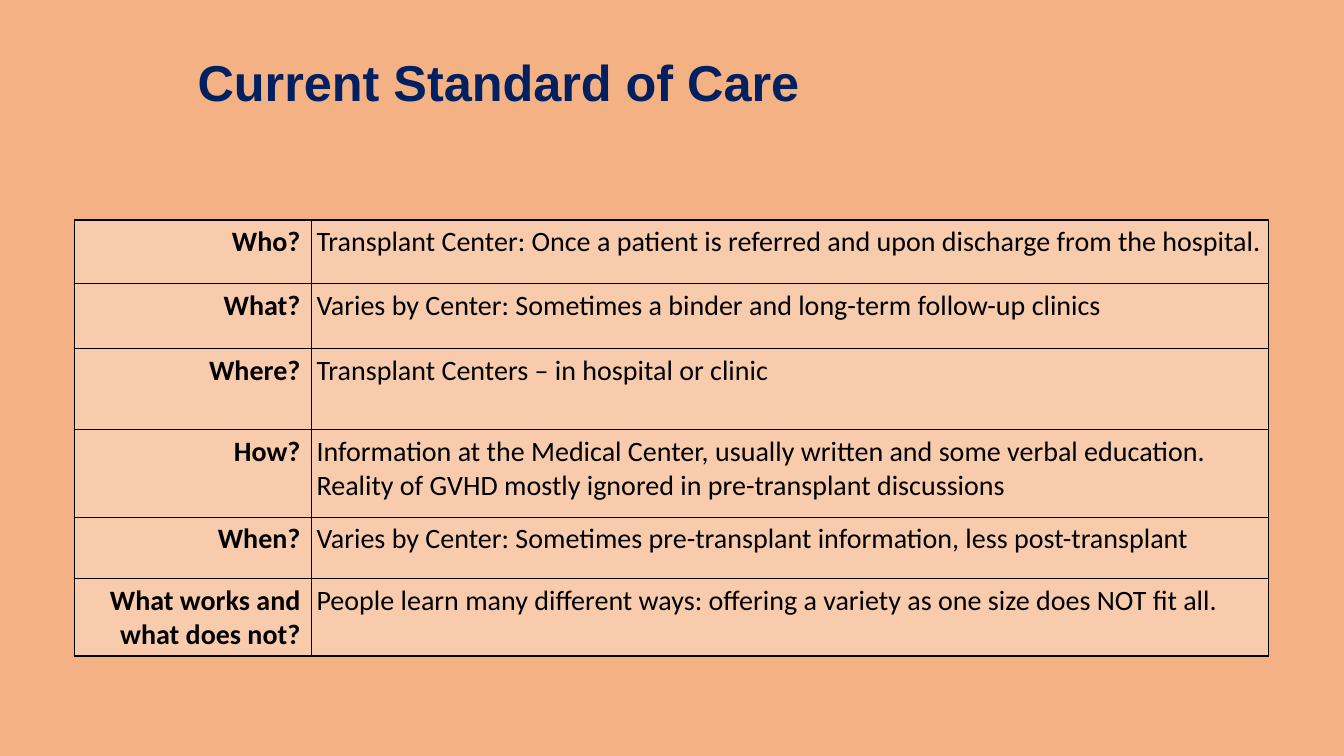
from lxml.etree import SubElement
from pptx import Presentation
from pptx.dml.color import RGBColor
from pptx.enum.text import MSO_ANCHOR, PP_ALIGN
from pptx.oxml.ns import qn
from pptx.util import Inches, Pt

COLORS = {
    "background": "F4B183",
    "cell": "F8CBAD",
    "title": "002060",
    "text": "000000",
    "border": "000000",
}

QUESTIONS = [
    ("Who?", "Transplant Center: Once a patient is referred and upon discharge from the hospital."),
    ("What?", "Varies by Center: Sometimes a binder and long-term follow-up clinics"),
    ("Where?", "Transplant Centers – in hospital or clinic"),
    ("How?", "Information at the Medical Center, usually written and some verbal education. "
             "Reality of GVHD mostly ignored in pre-transplant discussions"),
    ("When?", "Varies by Center: Sometimes pre-transplant information, less post-transplant"),
    ("What works and what does not?",
     "People learn many different ways: offering a variety as one size does NOT fit all."),
]


class SlideBuilder:
    """Holds the style and the current slide; lengths are percent of the slide."""

    title_font, body_font = "Arial", "Calibri"
    title_size, body_size = 36, 20
    cell_margin, label_margin = Inches(0.05), Inches(0.11)

    def __init__(self, presentation):
        self.width = presentation.slide_width
        self.height = presentation.slide_height
        self.slide = presentation.slides.add_slide(presentation.slide_layouts[6])

    def across(self, share):
        return round(self.width * share / 100)

    def down(self, share):
        return round(self.height * share / 100)

    def paint(self, fill, color):
        fill.solid()
        fill.fore_color.rgb = RGBColor.from_string(COLORS[color])

    def background(self):
        self.paint(self.slide.background.fill, "background")

    def add_text(self, paragraph, text, font, size, color, bold):
        run = paragraph.add_run()
        run.text = text
        run.font.name = font
        run.font.size = Pt(size)
        run.font.bold = bold
        run.font.color.rgb = RGBColor.from_string(COLORS[color])

    def title(self, text, left, top, width, height):
        shape = self.slide.shapes.add_textbox(
            self.across(left), self.down(top), self.across(width), self.down(height))
        frame = shape.text_frame
        frame.word_wrap = True
        frame.vertical_anchor = MSO_ANCHOR.MIDDLE
        frame.margin_left = frame.margin_right = 0
        frame.margin_top = frame.margin_bottom = 0
        paragraph = frame.paragraphs[0]
        paragraph.line_spacing = 0.9
        self.add_text(paragraph, text, self.title_font, self.title_size, "title", True)

    def borders(self, cell):
        properties = cell._tc.get_or_add_tcPr()
        for side in ("a:lnL", "a:lnR", "a:lnT", "a:lnB"):
            line = SubElement(properties, qn(side), w=str(Pt(1)))
            fill = SubElement(line, qn("a:solidFill"))
            SubElement(fill, qn("a:srgbClr"), val=COLORS["border"])

    def cell(self, cell, text, is_label):
        cell.margin_left = cell.margin_top = cell.margin_bottom = self.cell_margin
        cell.margin_right = self.label_margin if is_label else self.cell_margin
        self.borders(cell)
        self.paint(cell.fill, "cell")
        paragraph = cell.text_frame.paragraphs[0]
        paragraph.alignment = PP_ALIGN.RIGHT if is_label else PP_ALIGN.LEFT
        self.add_text(paragraph, text, self.body_font, self.body_size, "text", is_label)

    def table(self, rows, left, top, column_shares, row_shares):
        shape = self.slide.shapes.add_table(
            len(rows), len(column_shares), self.across(left), self.down(top),
            self.across(sum(column_shares)), self.down(sum(row_shares)))
        table = shape.table
        table.first_row = table.horz_banding = False
        for column, share in zip(table.columns, column_shares):
            column.width = self.across(share)
        for row, share, texts in zip(table.rows, row_shares, rows):
            row.height = self.down(share)
            for index, text in enumerate(texts):
                self.cell(row.cells[index], text, is_label=index == 0)


def main():
    presentation = Presentation()
    presentation.slide_width = Inches(13.33)
    presentation.slide_height = Inches(7.5)
    builder = SlideBuilder(presentation)

    # Background and title
    builder.background()
    builder.title("Current Standard of Care", 14.7, 3.47, 64.8, 15.47)

    # Questions and answers
    builder.table(QUESTIONS, 5.55, 29.1, column_shares=[17.63, 71.2],
                  row_shares=[8.4, 8.65, 10.67, 11.6, 8.13, 10.13])

    presentation.save("out.pptx")


if __name__ == "__main__":
    main()
